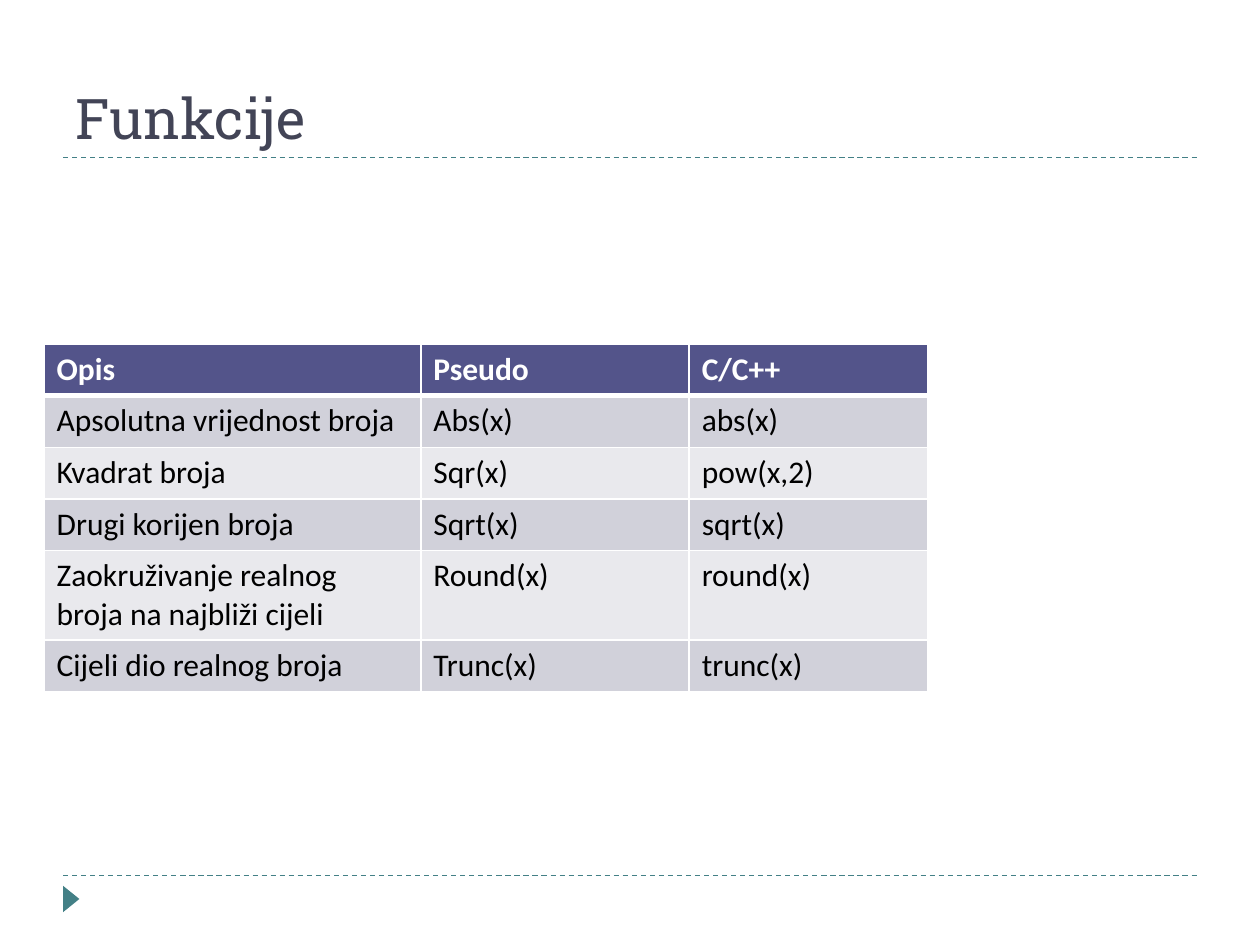
from lxml.etree import SubElement
from pptx import Presentation
from pptx.dml.color import RGBColor
from pptx.enum.dml import MSO_LINE
from pptx.enum.shapes import MSO_CONNECTOR, MSO_SHAPE
from pptx.enum.text import MSO_ANCHOR, PP_ALIGN
from pptx.oxml import parse_xml
from pptx.oxml.ns import nsdecls, qn
from pptx.util import Inches, Pt

TITLE = "Funkcije"
ROWS = [
    ("Opis", "Pseudo", "C/C++"),
    ("Apsolutna vrijednost broja", "Abs(x)", "abs(x)"),
    ("Kvadrat broja", "Sqr(x)", "pow(x,2)"),
    ("Drugi korijen broja", "Sqrt(x)", "sqrt(x)"),
    ("Zaokruživanje realnog broja na najbliži cijeli", "Round(x)", "round(x)"),
    ("Cijeli dio realnog broja", "Trunc(x)", "trunc(x)"),
]
COLS = (2.99, 2.13, 1.89)
ROW = 0.41
WIDE, HIGH = 10, 7.5
EDGE = WIDE / 20
RULES = (6.95, 1.25)

TEAL = RGBColor(0x43, 0x80, 0x86)
SLATE = RGBColor(0x42, 0x44, 0x56)
INDIGO = RGBColor(0x53, 0x54, 0x8A)
BANDS = (RGBColor(0xE9, 0xE9, 0xED), RGBColor(0xD1, 0xD1, 0xDA))
WHITE = RGBColor(0xFF, 0xFF, 0xFF)
BLACK = RGBColor(0, 0, 0)


def add_rule(slide, y):
    rule = slide.shapes.add_connector(
        MSO_CONNECTOR.STRAIGHT, Inches(EDGE), Inches(y), Inches(WIDE - EDGE), Inches(y))
    rule.line.color.rgb = TEAL
    rule.line.width = Pt(0.75)
    rule.line.dash_style = MSO_LINE.DASH
    SubElement(rule.element.spPr, qn("a:effectLst"))


def add_marker(slide):
    mark = slide.shapes.add_shape(
        MSO_SHAPE.ISOSCELES_TRIANGLE, Inches(0.46), Inches(7.07), Inches(0.21), Inches(0.13))
    mark.rotation = 90
    mark.shadow.inherit = False
    mark.fill.solid()
    mark.fill.fore_color.rgb = TEAL
    mark.line.fill.background()


def set_title(slide):
    title = slide.shapes.title
    title.left, title.top = Inches(EDGE), Inches(0.17)
    title.width, title.height = Inches(WIDE - 2 * EDGE), Inches(1.08)
    frame = title.text_frame
    frame.text = TITLE
    frame.vertical_anchor = MSO_ANCHOR.BOTTOM
    para = frame.paragraphs[0]
    para.alignment = PP_ALIGN.LEFT
    para.font.size = Pt(32)
    para.font.name = "Roboto Slab"
    para.font.color.rgb = SLATE


def set_borders(cell, row):
    widths = {"L": 1, "R": 1, "T": 3 if row == 1 else 1, "B": 3 if row == 0 else 1}
    for spot, (side, width) in enumerate(widths.items()):
        line = parse_xml(
            f'<a:ln{side} {nsdecls("a")} w="{Pt(width)}"><a:solidFill>'
            f'<a:srgbClr val="{WHITE}"/></a:solidFill></a:ln{side}>')
        cell._tc.get_or_add_tcPr().insert(spot, line)


def add_grid(slide):
    table = slide.shapes.add_table(
        len(ROWS), len(COLS), Inches(0.35), Inches(2.73),
        Inches(sum(COLS)), Inches(ROW * len(ROWS))).table
    for col, width in zip(table.columns, COLS):
        col.width = Inches(width)
    for r, texts in enumerate(ROWS):
        table.rows[r].height = Inches(ROW)
        head = r == 0
        for c, text in enumerate(texts):
            cell = table.cell(r, c)
            cell.text = text
            cell.fill.solid()
            cell.fill.fore_color.rgb = INDIGO if head else BANDS[r % 2]
            font = cell.text_frame.paragraphs[0].font
            font.name = "Calibri"
            font.size = Pt(18)
            font.bold = head
            font.color.rgb = WHITE if head else BLACK
            set_borders(cell, r)


def main():
    deck = Presentation()
    deck.slide_width, deck.slide_height = Inches(WIDE), Inches(HIGH)
    slide = deck.slides.add_slide(deck.slide_layouts[5])
    for y in RULES:
        add_rule(slide, y)
    add_marker(slide)
    set_title(slide)
    add_grid(slide)
    deck.save("out.pptx")


if __name__ == "__main__":
    main()
